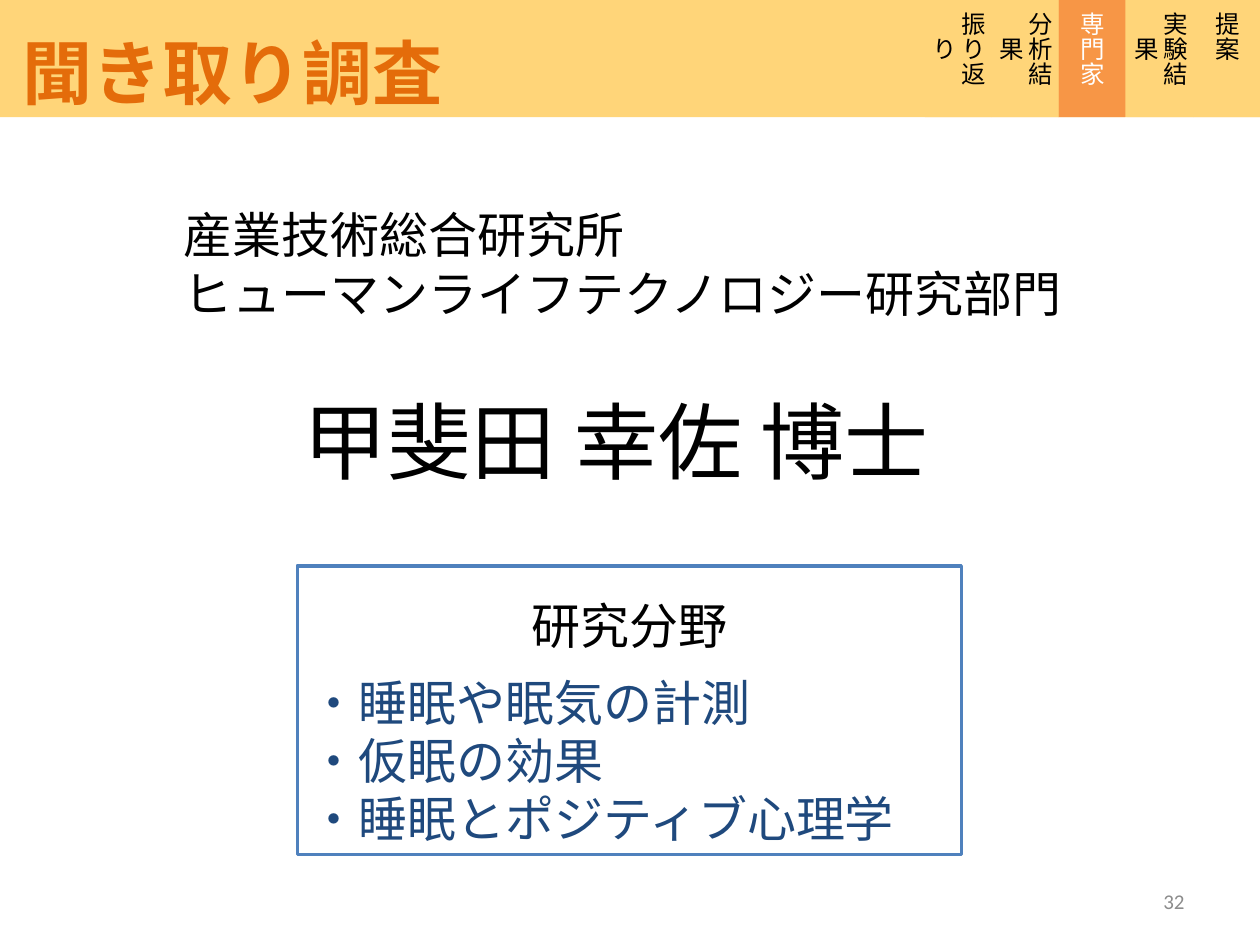
import pptx
import pptx.util
import pptx.dml.color
import pptx.enum.shapes
import pptx.enum.text

Inches, Pt = pptx.util.Inches, pptx.util.Pt
ALIGN = pptx.enum.text.PP_ALIGN
ANCHOR = pptx.enum.text.MSO_ANCHOR
RECT = pptx.enum.shapes.MSO_SHAPE.RECTANGLE

COLORS = {"band": "FFD579", "current": "F79646", "title": "E46C0A", "text": "000000",
          "white": "FFFFFF", "border": "4F81BD", "topic": "1F497D", "number": "8C8C8C"}
JAPANESE = "Noto Sans CJK JP"
LINE_PITCH = 1.19

TITLE = "聞き取り調査"
AFFILIATION = ["産業技術総合研究所", "ヒューマンライフテクノロジー研究部門"]
EXPERT = "甲斐田 幸佐 博士"
FIELD_HEADING = "研究分野"
FIELDS = ["・睡眠や眠気の計測", "・仮眠の効果", "・睡眠とポジティブ心理学"]
TABS = ["提案", "実験結果", "専門家", "分析結果", "振り返り"]
CURRENT_TAB = "専門家"
PAGE = "32"

SLIDE_W, BAND_H, TAB_W = 10, 0.93, 0.532


def rgb(name):
    return pptx.dml.color.RGBColor.from_string(COLORS[name])


def add_line(tf, text, size, color="text", align=ALIGN.LEFT, before=0, font=JAPANESE, bold=False):
    p = tf.paragraphs[0] if not tf.paragraphs[0].runs else tf.add_paragraph()
    layout = {"alignment": align, "line_spacing": Pt(round(size * LINE_PITCH, 1))}
    if before:
        layout["space_before"] = Pt(before)
    for name, value in layout.items():
        setattr(p, name, value)
    r = p.add_run()
    r.text = text
    for name, value in {"name": font, "size": Pt(size), "bold": bold}.items():
        setattr(r.font, name, value)
    r.font.color.rgb = rgb(color)
    if font == JAPANESE:
        ea = r.font._element.makeelement(pptx.oxml.ns.qn("a:ea"), {"typeface": font})
        r.font._element.append(ea)


def add_text(slide, box, lines, size, wrap=False, **style):
    tf = slide.shapes.add_textbox(*map(Inches, box)).text_frame
    tf.word_wrap = wrap
    tf.margin_top = Inches(round(0.05 + 0.1 * size / 72, 2))
    for text in lines:
        add_line(tf, text, size, **style)
    return tf


def add_rect(slide, box, fill, border=None):
    sp = slide.shapes.add_shape(RECT, *map(Inches, box))
    sp.shadow.inherit = False
    sp.fill.solid()
    sp.fill.fore_color.rgb = rgb(fill)
    if border:
        sp.line.color.rgb = rgb(border)
        sp.line.width = Pt(2)
    else:
        sp.line.fill.background()
    return sp


def main():
    prs = pptx.Presentation()
    prs.slide_width, prs.slide_height = Inches(SLIDE_W), Inches(7.5)
    s = prs.slides.add_slide(prs.slide_layouts[6])

    tf = add_text(s, (7.17, 6.95, 2.33, 0.4), [PAGE], 12, wrap=True,
                  color="number", align=ALIGN.RIGHT, font="Calibri")
    tf.margin_top = Inches(0.05)
    tf.vertical_anchor = ANCHOR.MIDDLE
    add_text(s, (1.36, 1.54, 7.27, 1.04), AFFILIATION, 28)
    add_text(s, (2.31, 2.98, 5.37, 0.91), [EXPERT], 48)

    tf = add_rect(s, (2.36, 4.49, 5.27, 2.29), "white", "border").text_frame
    tf.word_wrap = True
    tf.vertical_anchor = ANCHOR.TOP
    tf.margin_top = Inches(0.24)
    add_line(tf, FIELD_HEADING, 28, align=ALIGN.CENTER)
    for i, field in enumerate(FIELDS):
        add_line(tf, field, 28, color="topic", before=0 if i else 10.7)

    add_rect(s, (0, 0, SLIDE_W, BAND_H), "band")
    add_text(s, (0.08, 0.13, 3.57, 0.77), [TITLE], 40, color="title", bold=True)
    for i, tab in enumerate(TABS):
        current = tab == CURRENT_TAB
        left = round(SLIDE_W - (i + 1) * TAB_W, 2)
        sp = add_rect(s, (left, 0, TAB_W, BAND_H), "current" if current else "band")
        tf = sp.text_frame
        tf.word_wrap = True
        tf.vertical_anchor = ANCHOR.MIDDLE
        tf._txBody.bodyPr.set("vert", "eaVert")
        add_line(tf, tab, 14, color="white" if current else "text", align=ALIGN.CENTER)

    prs.save("out.pptx")


if __name__ == "__main__":
    main()
